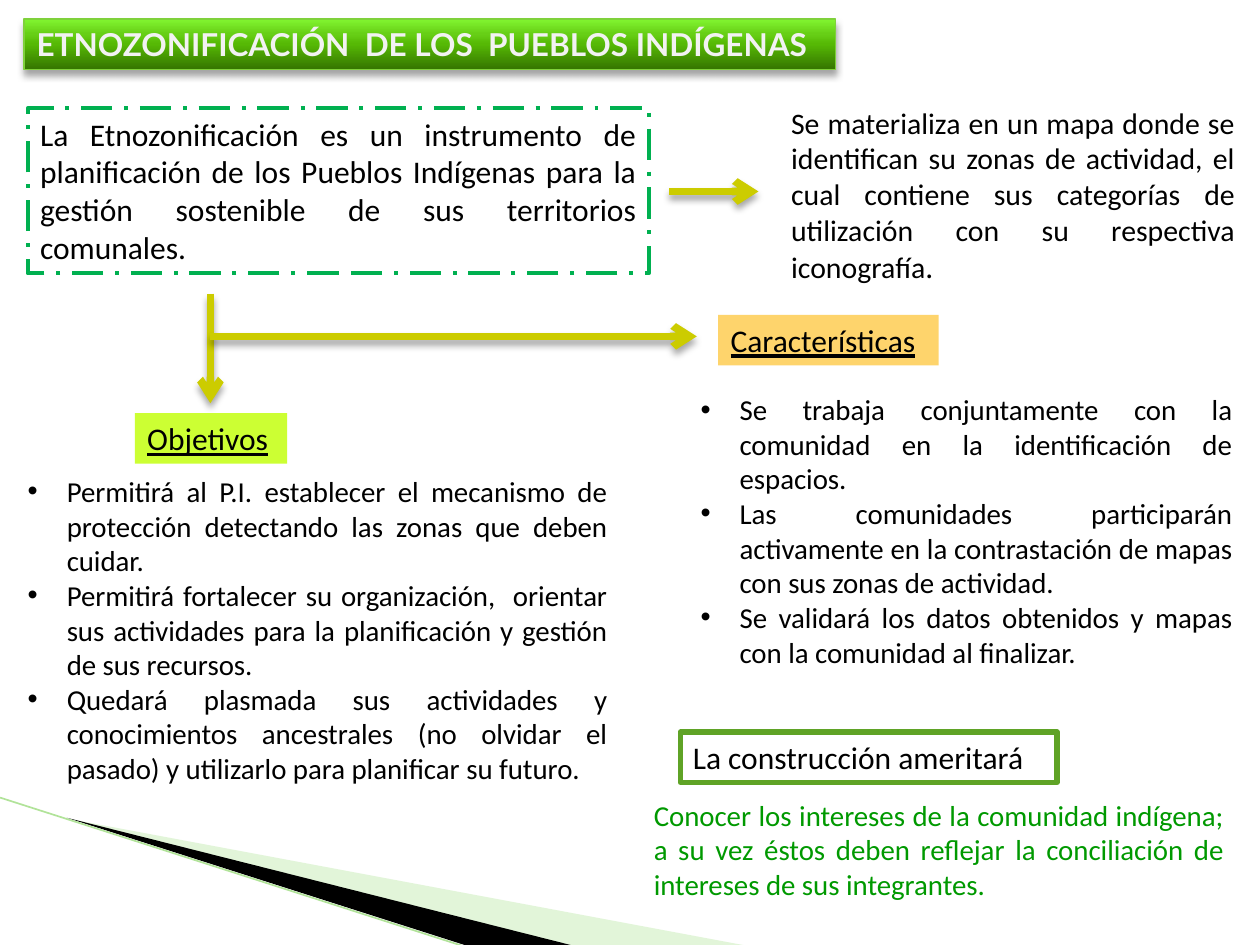
from pptx import Presentation
from pptx.dml.color import RGBColor
from pptx.enum.dml import MSO_LINE
from pptx.enum.shapes import MSO_CONNECTOR, MSO_SHAPE
from pptx.enum.text import MSO_ANCHOR, PP_ALIGN
from pptx.oxml.ns import qn
from pptx.util import Inches, Pt
from lxml.etree import SubElement

OLIVE = "CCCC00"
BLACK = "000000"


def rgb(value):
    return RGBColor.from_string(value)


def place(shape, box):
    shape.left, shape.top, shape.width, shape.height = [Inches(v) for v in box]


def add_color(parent, color, alpha=None):
    clr = SubElement(parent, qn("a:srgbClr"), val=color)
    if alpha is not None:
        SubElement(clr, qn("a:alpha"), val=str(alpha * 1000))


def add_shadow(shape):
    effects = SubElement(shape._element.spPr, qn("a:effectLst"))
    shadow = SubElement(effects, qn("a:outerShdw"), blurRad=str(Pt(4)),
                        dist=str(Pt(3)), dir="5400000", rotWithShape="0")
    add_color(shadow, BLACK, 35)


def write(shape, paragraphs, size, color=BLACK, font="Calibri",
          align=PP_ALIGN.LEFT, bullets=False, anchor=MSO_ANCHOR.TOP):
    tf = shape.text_frame
    tf.word_wrap = True
    tf.vertical_anchor = anchor
    tf.text = "\n".join(paragraphs)
    for p in tf.paragraphs:
        if bullets:
            pPr = p._p.get_or_add_pPr()
            pPr.set("marL", str(Inches(0.31)))
            pPr.set("indent", str(-Inches(0.31)))
            SubElement(pPr, qn("a:buFont"), typeface="Arial")
            SubElement(pPr, qn("a:buChar"), char="•")
        p.alignment = align
        p.space_before = Pt(0)
        for r in p.runs:
            r.font.size = Pt(size)
            r.font.name = font
            r.font.color.rgb = rgb(color)
    return tf


def add_decoration(s):
    """Green and black wedges in the lower left corner."""
    wedges = [
        ([(0.55, 6.5), (5.95, 7.51), (4.56, 7.51)], "B8E7A1", 40),
        ([(0.53, 6.49), (4.57, 7.51), (3.72, 7.51)], BLACK, None),
    ]
    for points, color, alpha in wedges:
        start, *rest = [(Inches(x), Inches(y)) for x, y in points]
        builder = s.shapes.build_freeform(*start)
        builder.add_line_segments(rest)
        wedge = builder.convert_to_shape()
        wedge.shadow.inherit = False
        wedge.fill.solid()
        wedge.fill.fore_color.rgb = rgb(color)
        wedge.line.fill.background()
        if alpha is not None:
            clr = wedge._element.spPr.find(".//" + qn("a:srgbClr"))
            SubElement(clr, qn("a:alpha"), val=str(alpha * 1000))
    edge = add_line(s, (0, 6.33), (3.71, 7.52), "B1E399", 0.95)
    SubElement(edge._element.spPr, qn("a:effectLst"))


def add_line(s, start, end, color, width):
    line = s.shapes.add_connector(MSO_CONNECTOR.STRAIGHT,
                                  *[Inches(v) for v in (*start, *end)])
    line.line.color.rgb = rgb(color)
    line.line.width = Pt(width)
    return line


def add_arrow(s, start, end):
    arrow = add_line(s, start, end, OLIVE, 4.33)
    SubElement(arrow.line._get_or_add_ln(), qn("a:tailEnd"), type="arrow")
    add_shadow(arrow)


def add_title(s, box, text):
    title = s.shapes.title
    place(title, box)
    title.fill.gradient()
    title.fill.gradient_angle = 90
    stops = title._element.spPr.find(".//" + qn("a:gsLst"))
    for stop in list(stops):
        stops.remove(stop)
    for pos, color in [(0, "357500"), (50, "56B905"), (70, "67CF16"), (100, "82F631")]:
        add_color(SubElement(stops, qn("a:gs"), pos=str(pos * 1000)), color)
    title.line.color.rgb = rgb("7FD13B")
    title.line.width = Pt(0.75)
    add_shadow(title)
    tf = write(title, [text], 18, "F2F2F2", "Lato", anchor=MSO_ANCHOR.MIDDLE)
    tf.paragraphs[0].runs[0].font.bold = True


def add_box(s, box, text, fill=None, line=None, width=0, dash=None,
            underline=False, align=PP_ALIGN.LEFT):
    """Rectangle with a fill or an outline around one paragraph."""
    shape = s.shapes.add_shape(MSO_SHAPE.RECTANGLE, *[Inches(v) for v in box])
    shape.shadow.inherit = False
    if fill:
        shape.fill.solid()
        shape.fill.fore_color.rgb = rgb(fill)
    else:
        shape.fill.background()
    if line:
        shape.line.color.rgb = rgb(line)
        shape.line.width = Pt(width)
        if dash:
            shape.line.dash_style = dash
    else:
        shape.line.fill.background()
    tf = write(shape, [text], 18, align=align)
    tf.paragraphs[0].runs[0].font.underline = underline


def add_paragraph(s, box, text, size, color=BLACK):
    tb = s.shapes.add_textbox(*[Inches(v) for v in box])
    return write(tb, [text], size, color, align=PP_ALIGN.JUSTIFY)


def add_list(placeholder, box, items):
    place(placeholder, box)
    write(placeholder, items, 16.5, align=PP_ALIGN.JUSTIFY, bullets=True)


def main():
    prs = Presentation()
    prs.slide_width, prs.slide_height = Inches(10), Inches(7.5)
    s = prs.slides.add_slide(prs.slide_layouts[3])
    add_decoration(s)

    # Title and definition
    add_title(s, (0.19, 0.15, 6.44, 0.4), "ETNOZONIFICACIÓN  DE LOS  PUEBLOS INDÍGENAS")
    add_box(s, (0.22, 0.86, 4.93, 1.31),
            "La Etnozonificación es un instrumento de planificación de los Pueblos "
            "Indígenas para la gestión sostenible de sus territorios comunales.",
            line="00B050", width=2.25, dash=MSO_LINE.LONG_DASH_DOT,
            align=PP_ALIGN.JUSTIFY)
    tf = add_paragraph(s, (6.18, 0.78, 3.72, 1.55),
                       "Se materializa en un mapa donde se identifican su zonas de "
                       "actividad, el cual contiene sus categorías de utilización con "
                       "su respectiva iconografía", 17)
    r = tf.paragraphs[0].add_run()
    r.text = "."
    r.font.size, r.font.name = Pt(18), "Calibri"
    r.font.color.rgb = rgb(BLACK)

    # Arrows
    add_arrow(s, (5.31, 1.52), (6.02, 1.52))
    add_arrow(s, (1.67, 2.33), (1.67, 3.2))
    add_arrow(s, (1.67, 2.67), (5.53, 2.67))

    # Objectives and features
    objectives, features = s.placeholders[1], s.placeholders[2]
    add_box(s, (1.07, 3.28, 1.21, 0.4), "Objetivos", fill="CCFF33", underline=True)
    add_list(objectives, (0.12, 3.71, 4.8, 2.88), [
        "Permitirá al P.I. establecer el mecanismo de protección detectando las "
        "zonas que deben cuidar.",
        "Permitirá fortalecer su organización,  orientar sus actividades para la "
        "planificación y gestión de sus recursos.",
        "Quedará plasmada sus actividades y conocimientos ancestrales (no olvidar "
        "el pasado) y utilizarlo para planificar su futuro.",
    ])
    add_box(s, (5.7, 2.5, 1.75, 0.4), "Características", fill="FED46C", underline=True)
    add_list(features, (5.46, 3.06, 4.42, 2.32), [
        "Se trabaja conjuntamente con la comunidad en la identificación de espacios.",
        "Las comunidades participarán activamente en la contrastación de mapas con "
        "sus zonas de actividad.",
        "Se validará los datos obtenidos y mapas con la comunidad al finalizar.",
    ])

    # Requirements
    add_box(s, (5.4, 5.81, 2.99, 0.4), "La construcción ameritará",
            line="5FA326", width=3)
    add_paragraph(s, (5.09, 6.28, 4.72, 0.93),
                  "Conocer los intereses de la comunidad indígena; a su vez éstos deben "
                  "reflejar la conciliación de intereses de sus integrantes.",
                  16.5, "009900")
    prs.save("out.pptx")


if __name__ == "__main__":
    main()
